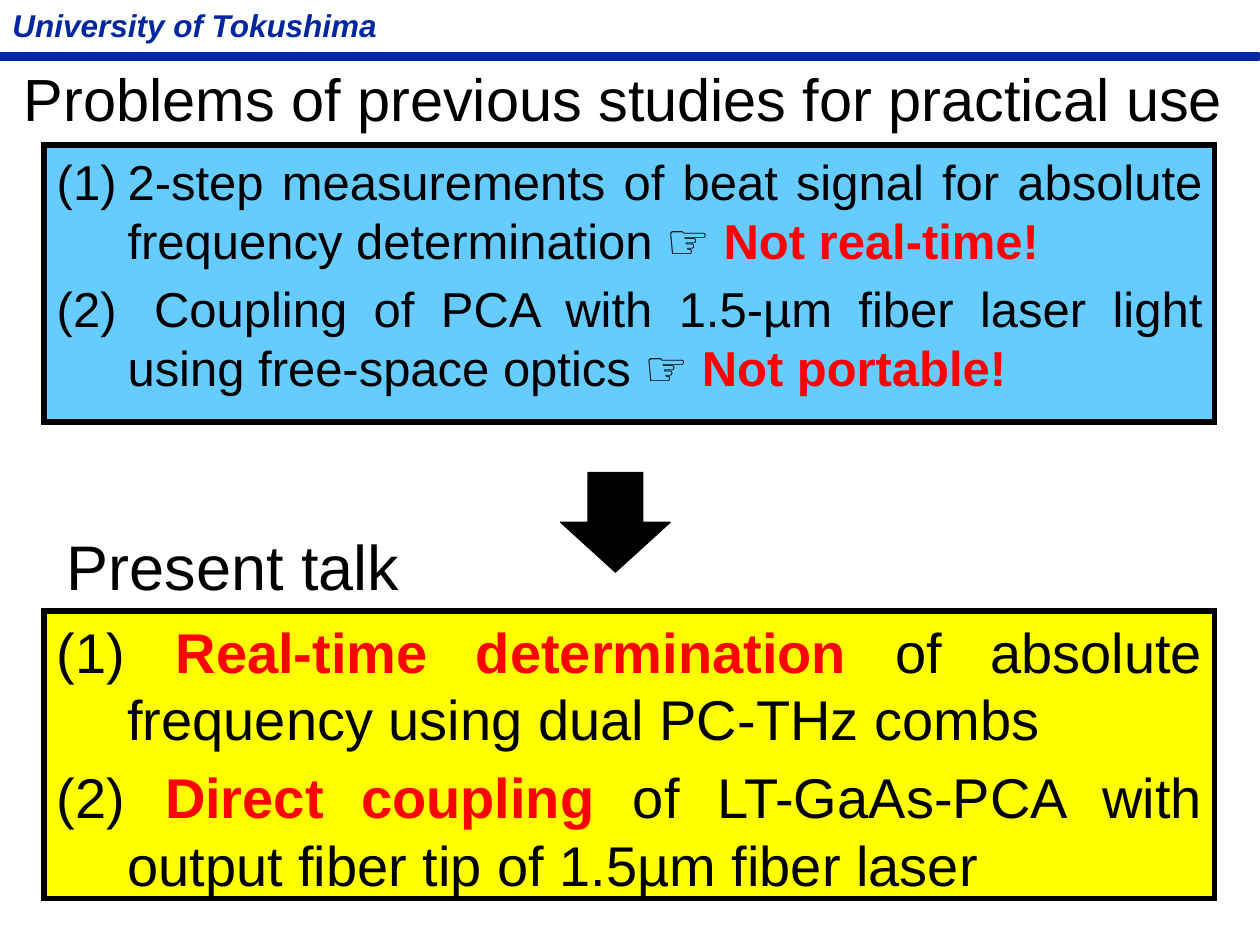
from dataclasses import dataclass
from lxml.etree import SubElement
from pptx import Presentation
from pptx.dml.color import RGBColor
from pptx.enum.shapes import MSO_SHAPE
from pptx.enum.text import MSO_ANCHOR, MSO_AUTO_SIZE, PP_ALIGN
from pptx.oxml.ns import qn
from pptx.util import Pt


@dataclass(frozen=True)
class Theme:
    face: str = "Arial"
    navy: str = "00279F"
    sky: str = "66CCFF"
    yellow: str = "FFFF00"
    black: str = "000000"
    red: str = "FF0000"
    brand: int = 18
    title: int = 34
    head: int = 36
    issue: int = 28
    goal: int = 32


theme = Theme()


def label(shape, text, size, color=theme.black):
    frame = shape.text_frame
    frame.word_wrap = False
    frame.auto_size = MSO_AUTO_SIZE.NONE
    frame.vertical_anchor = MSO_ANCHOR.TOP
    para = frame.paragraphs[0]
    para.text = text
    para.alignment = PP_ALIGN.LEFT
    font = para.font
    font.name, font.size = theme.face, Pt(size)
    font.color.rgb = RGBColor.from_string(color)
    return font


def panel(shape, fill, size, items):
    """Fill a framed box with numbered items; runs marked True are red and bold."""
    shape.fill.solid()
    shape.fill.fore_color.rgb = RGBColor.from_string(fill)
    shape.line.color.rgb = RGBColor.from_string(theme.black)
    shape.line.width = Pt(3)
    SubElement(shape.line._get_or_add_ln(), qn("a:miter"), lim="800000")
    frame = shape.text_frame
    frame.word_wrap = True
    frame.auto_size = MSO_AUTO_SIZE.NONE
    frame.vertical_anchor = MSO_ANCHOR.TOP
    for i, runs in enumerate(items):
        para = frame.add_paragraph() if i else frame.paragraphs[0]
        para.alignment = PP_ALIGN.JUSTIFY
        para.space_before = Pt(0.2 * size if i else 0)
        props = para._p.get_or_add_pPr()
        props.set("marL", str(Pt(40.5)))
        props.set("indent", str(Pt(-40.5)))
        SubElement(props, qn("a:buFont"), typeface=theme.face)
        SubElement(props, qn("a:buAutoNum"), type="arabicParenBoth")
        para.font.name, para.font.size = theme.face, Pt(size)
        para.font.color.rgb = RGBColor.from_string(theme.black)
        for text, strong in runs:
            run = para.add_run()
            run.text = text
            if strong:
                run.font.bold = True
                run.font.color.rgb = RGBColor.from_string(theme.red)


deck = Presentation()
deck.slide_width, deck.slide_height = Pt(720), Pt(540)
slide = deck.slides.add_slide(deck.slide_layouts[1])
shapes = slide.shapes
title, body = slide.placeholders

# Header
bar = shapes.add_shape(MSO_SHAPE.RECTANGLE, Pt(0), Pt(30.2), Pt(719.3), Pt(4.3))
brand = shapes.add_textbox(Pt(0), Pt(0), Pt(224.6), Pt(28.8))
font = label(brand, "University of Tokushima", theme.brand, theme.navy)
font.bold = font.italic = True

# Problems
title.left, title.top, title.width, title.height = Pt(6.5), Pt(31.7), Pt(707), Pt(48.2)
label(title, "Problems of previous studies for practical use", theme.title)
body.left, body.top, body.width, body.height = Pt(25.2), Pt(82.8), Pt(669), Pt(158.4)
panel(body, theme.sky, theme.issue, [
    [("2-step measurements of beat signal for absolute frequency determination ☞ ", False),
     ("Not real-time!", True)],
    [(" Coupling of PCA with 1.5-µm fiber laser light using free-space optics ☞ ", False),
     ("Not portable!", True)],
])

# Present talk
goals = shapes.add_shape(MSO_SHAPE.RECTANGLE, Pt(25.2), Pt(349.2), Pt(669), Pt(164.2))
panel(goals, theme.yellow, theme.goal, [
    [(" ", False), ("Real-time determination ", True),
     ("of absolute frequency using dual PC-THz combs", False)],
    [(" ", False), ("Direct coupling ", True),
     ("of LT-GaAs-PCA with output fiber tip of 1.5µm fiber laser", False)],
])
goals.shadow.inherit = False
head = shapes.add_textbox(Pt(31), Pt(298), Pt(207.4), Pt(51.1))
label(head, "Present talk", theme.head)

arrow = shapes.add_shape(MSO_SHAPE.DOWN_ARROW, Pt(320.4), Pt(270), Pt(62.6), Pt(56.9))
for shape, color, width in [(bar, theme.navy, 1), (arrow, theme.black, 0.75)]:
    shape.shadow.inherit = False
    shape.fill.solid()
    shape.fill.fore_color.rgb = RGBColor.from_string(color)
    shape.line.color.rgb = RGBColor.from_string(color)
    shape.line.width = Pt(width)

deck.save("out.pptx")
